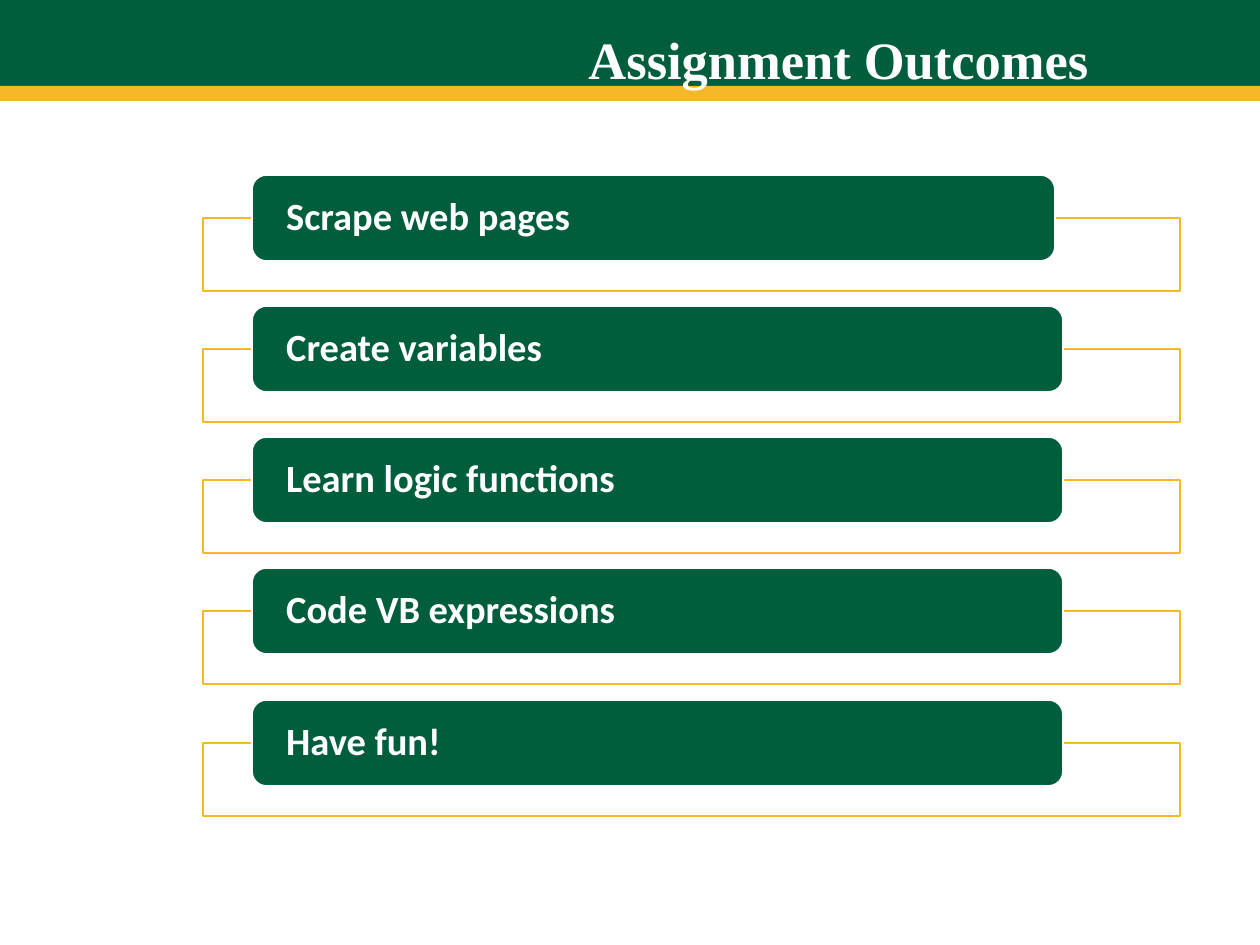
from dataclasses import dataclass
from typing import Optional

from lxml.etree import SubElement
from pptx import Presentation
from pptx.dml.color import RGBColor
from pptx.enum.shapes import MSO_SHAPE
from pptx.enum.text import MSO_ANCHOR, PP_ALIGN
from pptx.oxml.ns import qn
from pptx.util import Emu, Pt

SCALE = 914400 / 126
GREEN, GOLD, WHITE = "005E3C", "F5B827", "FFFFFF"


@dataclass
class Box:
    left: int
    top: int
    width: int
    height: int
    fill: str
    line: Optional[str] = None
    kind: int = MSO_SHAPE.RECTANGLE
    alpha: int = 100


def px(num: int) -> Emu:
    return Emu(round(num * SCALE))


def color(code: str) -> RGBColor:
    return RGBColor.from_string(code)


def put(item, values: dict) -> None:
    """Set each named attribute of item."""
    for key, value in values.items():
        setattr(item, key, value)


def draw(slide, box: Box):
    spot = map(px, (box.left, box.top, box.width, box.height))
    shape = slide.shapes.add_shape(box.kind, *spot)
    shape.shadow.inherit = False
    shape.fill.solid()
    shape.fill.fore_color.rgb = color(box.fill)
    if box.alpha < 100:
        tone = shape.fill._xPr.find(qn("a:solidFill"))[0]
        SubElement(tone, qn("a:alpha"), val=str(box.alpha * 1000))
    if box.line:
        shape.line.color.rgb = color(box.line)
        shape.line.width = Pt(1)
    else:
        shape.line.fill.background()
    return shape


def write(shape, text: str, frame: dict, para: dict, font: dict) -> None:
    put(shape.text_frame, {"word_wrap": True, **frame})
    line = shape.text_frame.paragraphs[0]
    put(line, para)
    run = line.add_run()
    run.text = text
    put(run.font, {"bold": True, **font})
    run.font.color.rgb = color(WHITE)


def main() -> None:
    deck = Presentation()
    put(deck, {"slide_width": px(1260), "slide_height": px(945)})
    slide = deck.slides.add_slide(deck.slide_layouts[6])

    draw(slide, Box(-1, 0, 1261, 86, GREEN))
    draw(slide, Box(-1, 86, 1261, 15, GOLD))
    title = slide.shapes.add_textbox(px(302), px(21), px(799), px(77))
    write(title, "Assignment Outcomes", {}, {"alignment": PP_ALIGN.RIGHT},
          {"name": "Times New Roman", "size": Pt(30)})

    goals = {
        "Scrape web pages": 803,
        "Create variables": 811,
        "Learn logic functions": 811,
        "Code VB expressions": 811,
        "Have fun!": 811,
    }
    frame = {"vertical_anchor": MSO_ANCHOR.MIDDLE,
             "margin_left": px(30), "margin_right": px(30),
             "margin_top": 0, "margin_bottom": 0}
    para = {"alignment": PP_ALIGN.LEFT, "line_spacing": 0.9}
    font = {"name": "Calibri", "size": Pt(22)}
    for row, (text, width) in enumerate(goals.items()):
        top = 175 + row * 525 // 4
        draw(slide, Box(203, top + 43, 977, 73, WHITE, GOLD, alpha=90))
        bar = draw(slide, Box(252, top, width, 86, GREEN, WHITE,
                              MSO_SHAPE.ROUNDED_RECTANGLE))
        write(bar, text, frame, para, font)

    deck.save("out.pptx")


if __name__ == "__main__":
    main()
